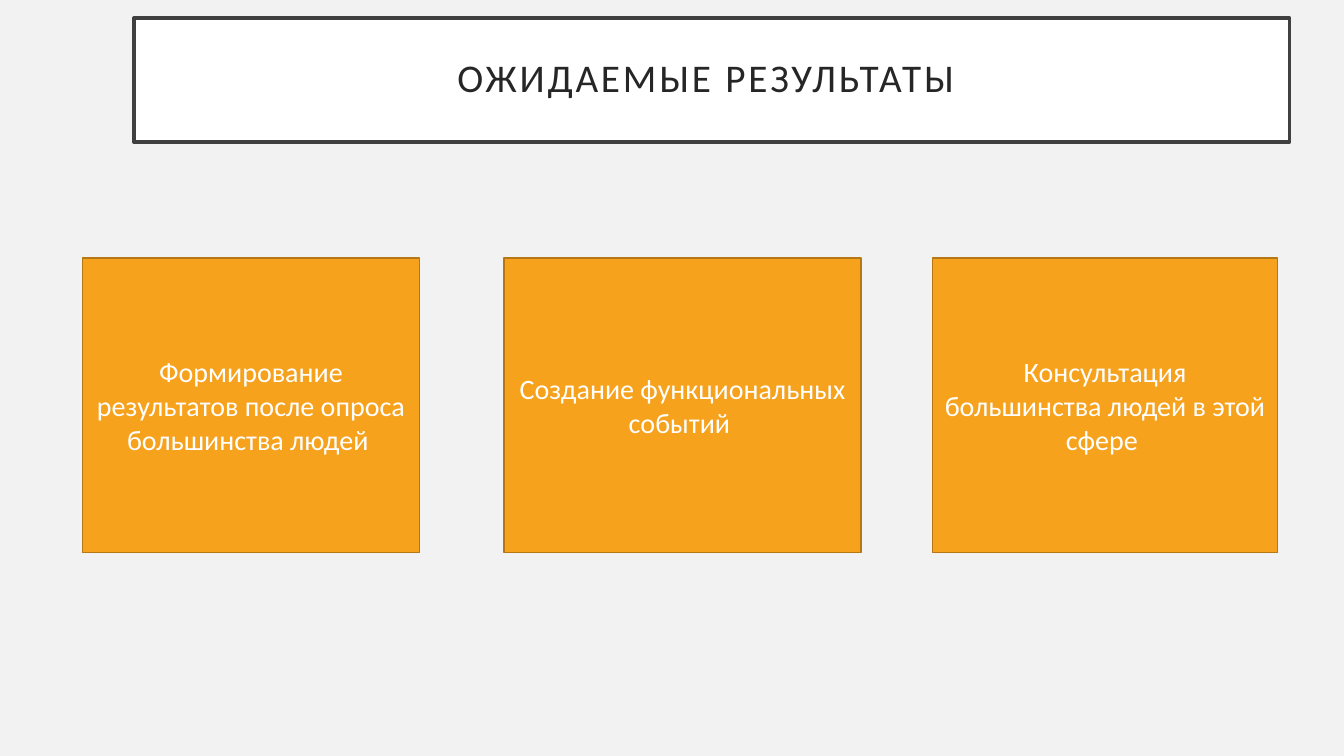
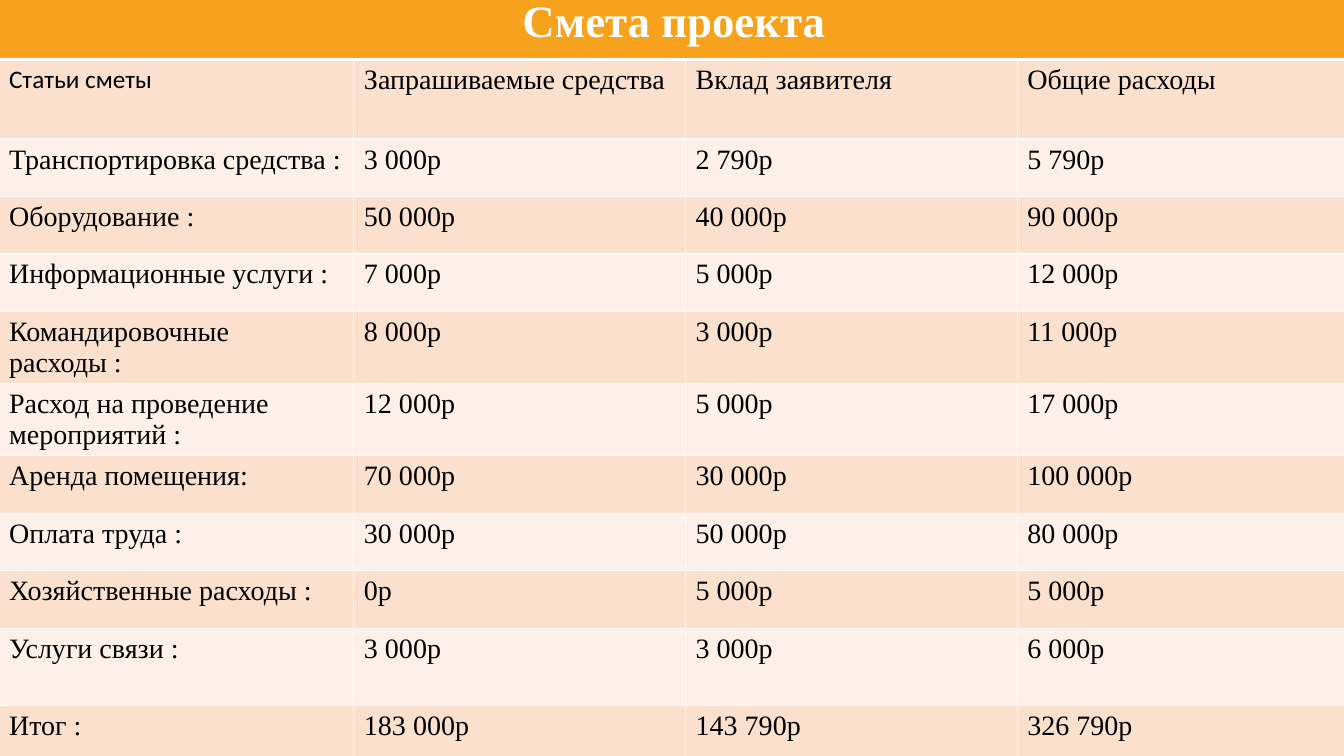
import dataclasses

import pptx
import pptx.dml.color
import pptx.enum.shapes
import pptx.enum.text
import pptx.oxml
import pptx.oxml.ns
import pptx.util

Inches = pptx.util.Inches
Pt = pptx.util.Pt
Align = pptx.enum.text.PP_ALIGN
Middle = pptx.enum.text.MSO_ANCHOR.MIDDLE


def rgb(code):
    return pptx.dml.color.RGBColor.from_string(code)


# Colours and type styles shared by the slides
@dataclasses.dataclass(frozen=True)
class Theme:
    back: str = "F2F2F2"
    white: str = "FFFFFF"
    frame: str = "404040"
    ink: str = "262626"
    black: str = "000000"
    orange: str = "F6A21D"
    edge: str = "B67815"
    bands: tuple = ("FBE0CD", "FDF0E8")
    sans: str = "Calibri"
    serif: str = "Times New Roman"

    def font(self, name, size, color, bold=False):
        return {"name": name, "size": Pt(size), "bold": bold, "color": color}


THEME = Theme()
TITLE = THEME.font(THEME.sans, 28, THEME.ink)
CARD = THEME.font(THEME.sans, 20, THEME.white)
HEAD = THEME.font(THEME.serif, 32, THEME.white, True)
LABEL = THEME.font(THEME.sans, 18, THEME.black)
BODY = THEME.font(THEME.serif, 20, THEME.black)

# Left edge, width and text of each card
CARDS = [
    (0.82, 3.34, "Формирование результатов после опроса большинства людей "),
    (5, 3.54, "Создание функциональных событий "),
    (9.25, 3.42, "Консультация большинства людей в этой сфере "),
]

COSTS = [
    ("Статьи сметы", "Запрашиваемые средства", "Вклад заявителя", "Общие расходы"),
    ("Транспортировка средства :", "3 000р", "2 790р", "5 790р"),
    ("Оборудование :", "50 000р", "40 000р", "90 000р"),
    ("Информационные услуги :", "7 000р", "5 000р", "12 000р"),
    ("Командировочные\nрасходы :", "8 000р", "3 000р", "11 000р"),
    ("Расход на проведение мероприятий :", "12 000р", "5 000р", "17 000р"),
    ("Аренда помещения:", "70 000р", "30 000р", "100 000р"),
    ("Оплата труда :", "30 000р", "50 000р", "80 000р"),
    ("Хозяйственные расходы :", "0р", "5 000р", "5 000р"),
    ("Услуги связи :", "3 000р", "3 000р", "6 000р"),
    ("Итог :", "183 000р", "143 790р", "326 790р"),
]
WIDTHS = [3.52] + [3.29] * 3
HEIGHTS = [0.66, 0.79] + [0.57] * 8 + [0.77] * 2


def apply(item, values):
    for key, value in values.items():
        setattr(item, key, value)


def paint(fill, color):
    fill.solid()
    fill.fore_color.rgb = rgb(color)


def write(frame, text, font, align=Align.LEFT):
    frame.text = text
    plain = {key: value for key, value in font.items() if key != "color"}
    for para in frame.paragraphs:
        para.alignment = align
        for run in para.runs:
            apply(run.font, plain)
            run.font.color.rgb = rgb(font["color"])


def add_page(deck):
    page = deck.slides.add_slide(deck.slide_layouts[6])
    paint(page.background.fill, THEME.back)
    return page


def add_box(page, place, text, font, fill, line, weight):
    kind = pptx.enum.shapes.MSO_SHAPE.RECTANGLE
    box = page.shapes.add_shape(kind, *map(Inches, place))
    box.shadow.inherit = False
    paint(box.fill, fill)
    box.line.color.rgb = rgb(line)
    box.line.width = Pt(weight)
    apply(box.text_frame, {"word_wrap": True, "vertical_anchor": Middle})
    write(box.text_frame, text, font, Align.CENTER)
    return box


def add_title(page, text):
    box = add_box(page, (1.33, 0.18, 11.46, 1.23), text, TITLE,
                  THEME.white, THEME.frame, 2.5)
    sides = ("left", "top", "right", "bottom")
    apply(box.text_frame, {f"margin_{side}": Inches(0.2) for side in sides})
    para = box.text_frame.paragraphs[0]
    para.line_spacing = 0.9
    # Letter spacing, in hundredths of a point
    para.runs[0]._r.get_or_add_rPr().set("spc", "200")


def add_rules(cell, **weights):
    # Cell borders must stand before the fill
    props = cell._tc.get_or_add_tcPr()
    for side in "LRTB":
        width = Pt(weights.get(side, 1))
        props.append(pptx.oxml.parse_xml(
            f'<a:ln{side} {pptx.oxml.ns.nsdecls("a")} w="{width}"><a:solidFill>'
            f'<a:srgbClr val="{THEME.white}"/></a:solidFill></a:ln{side}>'))


def add_costs(page):
    place = map(Inches, (-0.01, -0.07, sum(WIDTHS), sum(HEIGHTS)))
    table = page.shapes.add_table(len(HEIGHTS), len(WIDTHS), *place).table
    table.horz_banding = False
    for col, width in zip(table.columns, WIDTHS):
        col.width = Inches(width)
    for row, height in zip(table.rows, HEIGHTS):
        row.height = Inches(height)

    # Heading across all columns
    for cell in table.rows[0].cells:
        add_rules(cell, B=3)
        paint(cell.fill, THEME.orange)
    table.cell(0, 0).merge(table.cell(0, len(WIDTHS) - 1))
    write(table.cell(0, 0).text_frame, "Смета проекта", HEAD, Align.CENTER)

    # Banded rows
    for r, texts in enumerate(COSTS):
        for c, text in enumerate(texts):
            cell = table.cell(r + 1, c)
            add_rules(cell, T=1 if r else 3)
            paint(cell.fill, THEME.bands[r % 2])
            write(cell.text_frame, text, BODY if r or c else LABEL)


def main():
    deck = pptx.Presentation()
    apply(deck, {"slide_width": Inches(13.33), "slide_height": Inches(7.5)})

    # Expected results
    page = add_page(deck)
    add_title(page, "ОЖИДАЕМЫЕ РЕЗУЛЬТАТЫ ")
    for left, width, text in CARDS:
        add_box(page, (left, 2.56, width, 2.92), text, CARD,
                THEME.orange, THEME.edge, 1)

    # Project budget
    add_costs(add_page(deck))
    deck.save("out.pptx")


if __name__ == "__main__":
    main()
